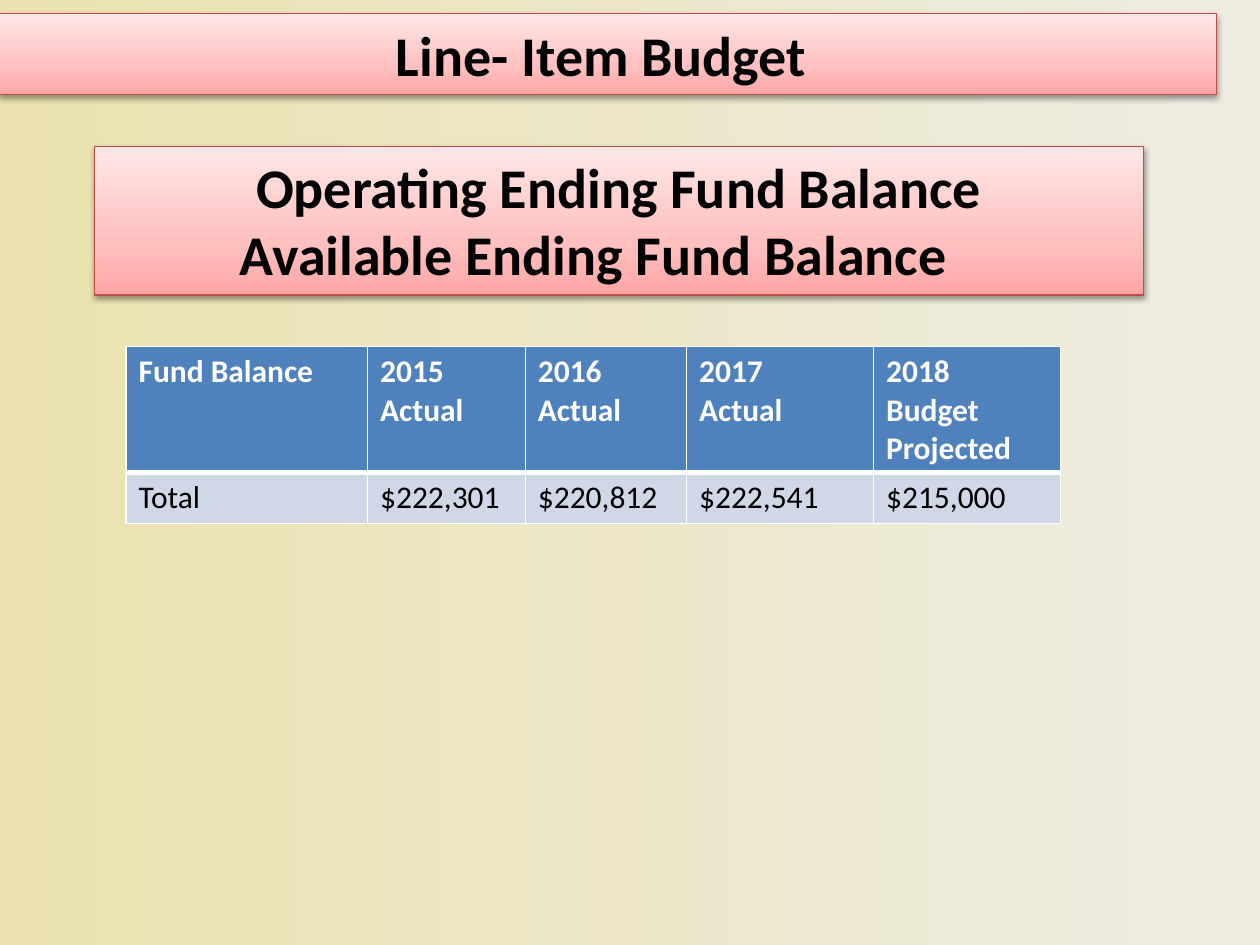
"""Build the line-item budget slide with its fund balance table."""
from copy import deepcopy

from lxml import etree
from pptx import Presentation
from pptx import util as u
from pptx.dml.color import RGBColor
from pptx.enum import shapes, text
from pptx.oxml import parse_xml
from pptx.oxml.ns import nsdecls, qn

BLACK = RGBColor(0x00, 0x00, 0x00)
WHITE = RGBColor(0xFF, 0xFF, 0xFF)
SAND = RGBColor(0xEB, 0xE2, 0xAF)
CREAM = RGBColor(0xEE, 0xEC, 0xE1)
ROSE = RGBColor(0xFF, 0xA6, 0xA5)
PINK = RGBColor(0xFF, 0xC0, 0xBF)
BLUSH = RGBColor(0xFF, 0xE7, 0xE7)
RED = RGBColor(0xBF, 0x4C, 0x48)
BLUE = RGBColor(0x4F, 0x81, 0xBD)
PALE_BLUE = RGBColor(0xD0, 0xD8, 0xE8)


def set_gradient(fill, holder, angle, stops):
    fill.gradient()
    fill.gradient_angle = angle
    stop_list = next(holder.iter(qn("a:gsLst")))
    while len(stop_list) < len(stops):
        stop_list.append(deepcopy(stop_list[-1]))
    for stop, (position, color) in zip(fill.gradient_stops, stops):
        stop.position = position
        stop.color.rgb = color


def add_span(para, words, size, color, bold):
    span = para.add_run()
    span.text = words
    span.font.name = "Calibri"
    span.font.size = u.Pt(size)
    span.font.bold = bold
    span.font.color.rgb = color


deck = Presentation()
deck.slide_width, deck.slide_height = u.Cm(25.4), u.Cm(19.05)
page = deck.slides.add_slide(deck.slide_layouts[6])
background_fill = page.background.fill
set_gradient(background_fill, page.element, 0, [(0, SAND), (0.97, CREAM)])

banners = [
    ((-0.03, 0.28, 24.56, 1.63), 0, ["Line- Item Budget "]),
    ((1.9, 2.95, 21.16, 3.0), 1.02,
     ["Operating Ending Fund Balance", "Available Ending Fund Balance"]),
]
for place, shift, lines in banners:
    box = page.shapes.add_shape(
        shapes.MSO_SHAPE.RECTANGLE, *[u.Cm(length) for length in place])
    set_gradient(box.fill, box.element, 90, [(0, ROSE), (0.35, PINK), (1, BLUSH)])
    box.line.color.rgb = RED
    box.line.width = u.Pt(0.75)
    box.shadow.inherit = False
    box.element.spPr.find(qn("a:effectLst")).append(parse_xml(
        f'<a:outerShdw {nsdecls("a")} blurRad="40000" dist="20000" dir="5400000" '
        'rotWithShape="0"><a:srgbClr val="000000"><a:alpha val="38000"/>'
        '</a:srgbClr></a:outerShdw>'))
    frame = box.text_frame
    frame.word_wrap = True
    frame.auto_size = text.MSO_AUTO_SIZE.SHAPE_TO_FIT_TEXT
    frame.vertical_anchor = text.MSO_ANCHOR.TOP
    frame.margin_right = u.Cm(0.25 + shift)
    for index, line in enumerate(lines):
        para = frame.paragraphs[0] if index == 0 else frame.add_paragraph()
        para.alignment = text.PP_ALIGN.CENTER
        if shift and index == 0:
            para._p.get_or_add_pPr().set("marL", str(u.Cm(shift)))
        add_span(para, line, 32, BLACK, True)

rows = [
    ["Fund Balance", "2015 Actual", "2016 Actual", "2017\nActual",
     "2018 Budget\nProjected"],
    ["Total", "$222,301", "$220,812", "$222,541", "$215,000"],
]
widths = [4.87, 3.18, 3.25, 3.77, 3.77]
heights = [2.5, 1.03]
styles = [(BLUE, WHITE, True), (PALE_BLUE, BLACK, False)]
edges = [{"L": 1, "R": 1, "T": 1, "B": 3}, {"L": 1, "R": 1, "T": 3, "B": 1}]

table = page.shapes.add_table(
    len(rows), len(widths), u.Cm(2.54), u.Cm(6.98),
    u.Cm(sum(widths)), u.Cm(sum(heights))).table
for column, width in zip(table.columns, widths):
    column.width = u.Cm(width)
for row_index, row in enumerate(rows):
    table.rows[row_index].height = u.Cm(heights[row_index])
    fill_color, font_color, bold = styles[row_index]
    for column_index, words in enumerate(row):
        cell = table.cell(row_index, column_index)
        properties = cell._tc.get_or_add_tcPr()
        for side, points in edges[row_index].items():
            border = etree.SubElement(
                properties, qn(f"a:ln{side}"), w=str(u.Pt(points)))
            paint = etree.SubElement(border, qn("a:solidFill"))
            etree.SubElement(paint, qn("a:srgbClr"), val=str(WHITE))
        cell.fill.solid()
        cell.fill.fore_color.rgb = fill_color
        for index, line in enumerate(words.split("\n")):
            frame = cell.text_frame
            para = frame.paragraphs[0] if index == 0 else frame.add_paragraph()
            add_span(para, line, 18, font_color, bold)

deck.save("out.pptx")
